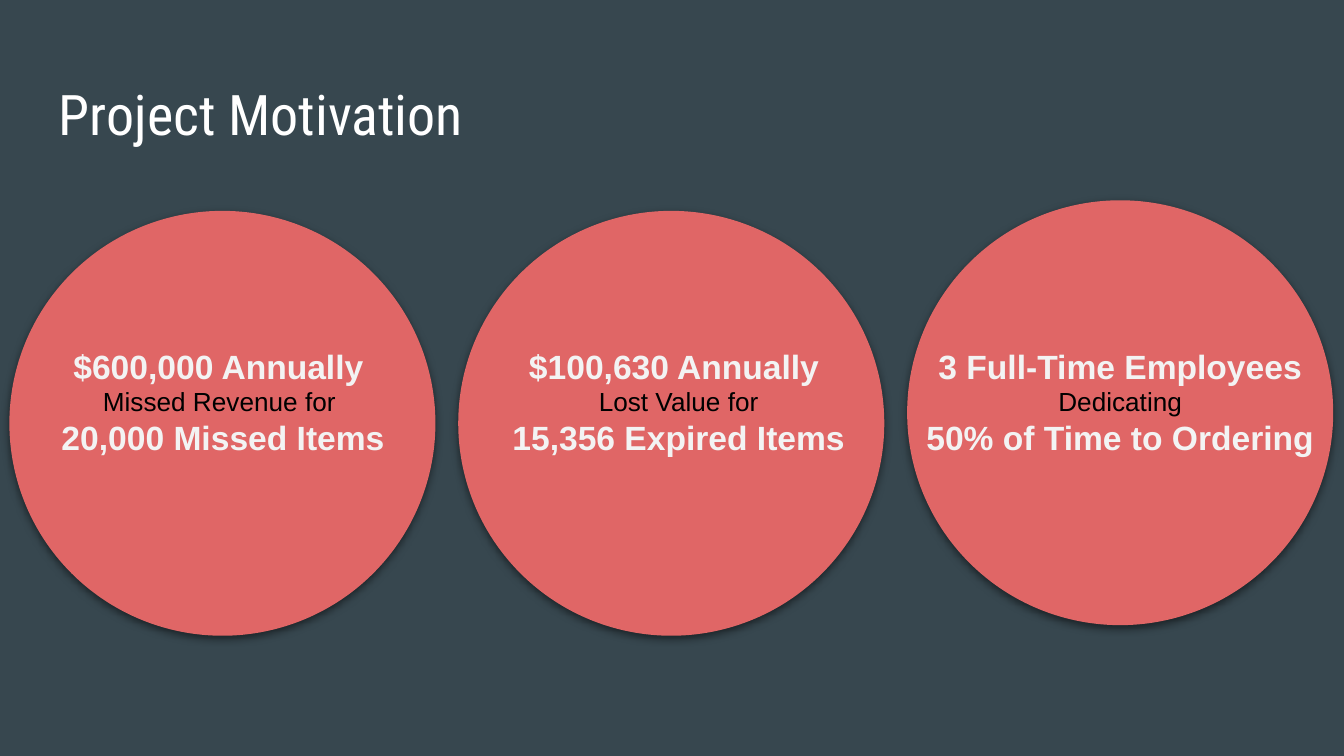
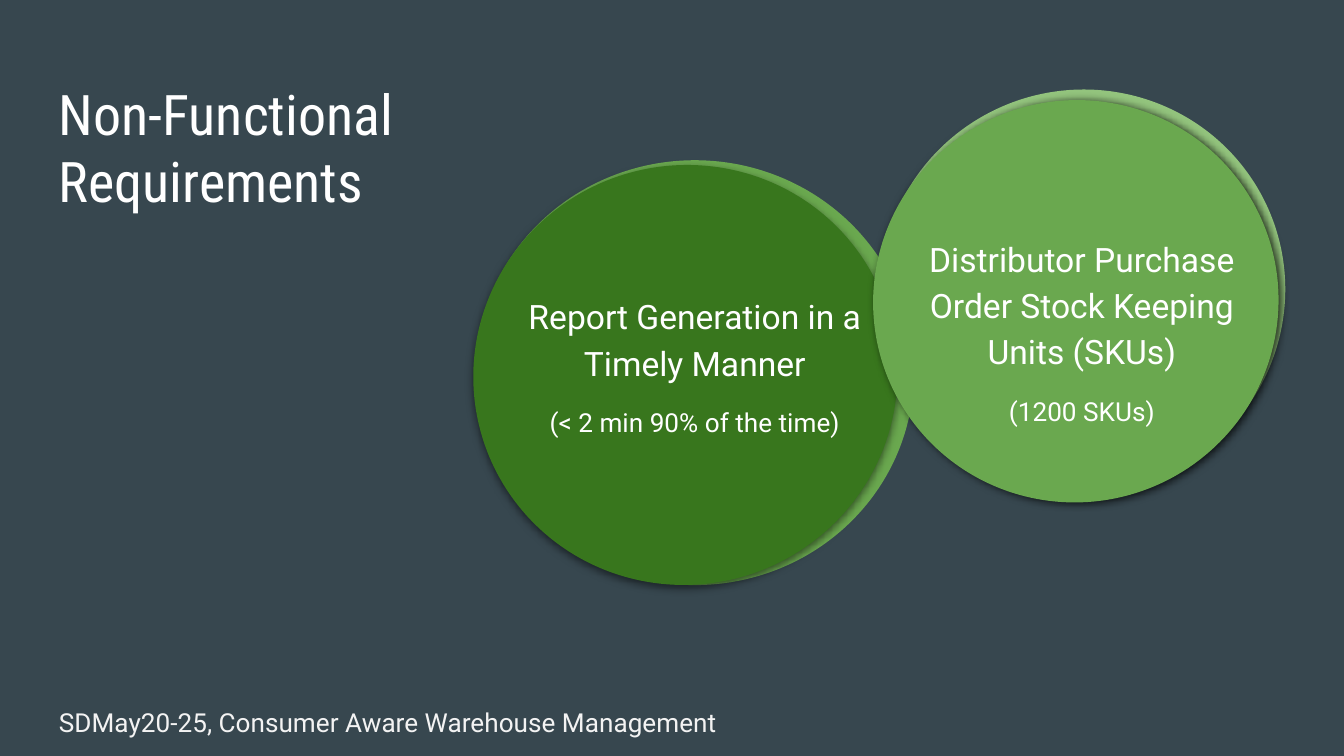
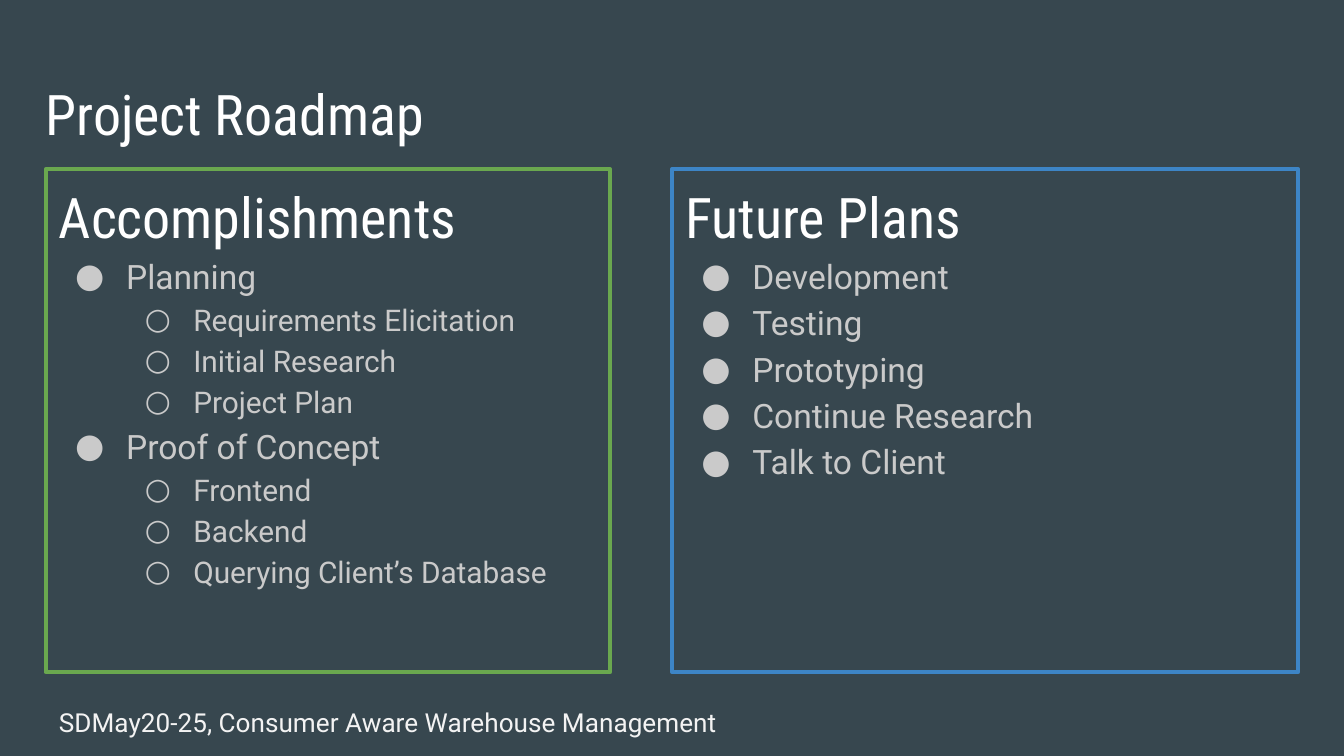
from dataclasses import dataclass

from lxml.etree import SubElement
from pptx import Presentation
from pptx.dml.color import RGBColor
from pptx.enum.shapes import MSO_SHAPE
from pptx.enum.text import MSO_ANCHOR, PP_ALIGN
from pptx.oxml.ns import qn
from pptx.util import Inches, Pt

SLIDE_WIDTH, SLIDE_HEIGHT = Inches(10), Inches(5.625)

SLATE = RGBColor(0x37, 0x47, 0x4F)
CORAL = RGBColor(0xE0, 0x66, 0x66)
PALE_GREEN = RGBColor(0x93, 0xC4, 0x7D)
GREEN = RGBColor(0x6A, 0xA8, 0x4F)
DARK_GREEN = RGBColor(0x38, 0x76, 0x1D)
BLUE = RGBColor(0x3D, 0x85, 0xC6)
WHITE = RGBColor(0xFF, 0xFF, 0xFF)
OFF_WHITE = RGBColor(0xF3, 0xF3, 0xF3)
LIGHT_GREY = RGBColor(0xCA, 0xCA, 0xCA)
BLACK = RGBColor(0x00, 0x00, 0x00)

FOOTER = "SDMay20-25, Consumer Aware Warehouse Management"
BULLETS = (("●", 0.5, -0.38), ("○", 1, -0.36))  # mark, margin, indent by level


@dataclass(frozen=True)
class Style:
    font: str
    size: int
    color: RGBColor
    bold: bool = False
    align: PP_ALIGN = PP_ALIGN.LEFT
    line_spacing: float = 1.0
    gap: int = 0
    level: int | None = None


HEADING = Style("Roboto Condensed", 30, WHITE)
FOOTNOTE = Style("Roboto", 14, OFF_WHITE)
FIGURE = Style("Arial", 18, OFF_WHITE, True, PP_ALIGN.CENTER)
LINK_WORDS = Style("Arial", 14, BLACK, False, PP_ALIGN.CENTER)
REQUIREMENT = Style("Roboto", 18, WHITE, False, PP_ALIGN.CENTER, 1.15)
MEASURE = Style("Roboto", 14, WHITE, False, PP_ALIGN.CENTER, 1.15, 10)
TOPIC = Style("Roboto", 18, LIGHT_GREY, line_spacing=1.15, level=0)
SUBTOPIC = Style("Roboto", 16, LIGHT_GREY, line_spacing=1.15, level=1)


def area(left, top, width, height):
    """Turn percentages of the slide's width and height into lengths."""
    return (int(SLIDE_WIDTH * left / 100), int(SLIDE_HEIGHT * top / 100),
            int(SLIDE_WIDTH * width / 100), int(SLIDE_HEIGHT * height / 100))


def add_bullet(para, style):
    mark, margin, indent = BULLETS[style.level]
    para.level = style.level
    properties = para._p.get_or_add_pPr()
    properties.set("marL", str(Inches(margin)))
    properties.set("indent", str(Inches(indent)))
    color = SubElement(properties, qn("a:buClr"))
    SubElement(color, qn("a:srgbClr"), val=str(style.color))
    SubElement(properties, qn("a:buFont"), typeface=style.font)
    SubElement(properties, qn("a:buChar"), char=mark)


def write(box, lines, anchor=MSO_ANCHOR.TOP):
    """Fill a box with (text, style) lines, one paragraph each."""
    frame = box.text_frame
    frame.word_wrap = True
    frame.vertical_anchor = anchor
    frame.margin_left = frame.margin_right = Inches(0.1)
    frame.margin_top = frame.margin_bottom = Inches(0.1)
    frame.text = "\n".join(text for text, _ in lines)
    for para, (_, style) in zip(frame.paragraphs, lines):
        para.alignment = style.align
        para.line_spacing = style.line_spacing
        para.space_before = para.space_after = Pt(style.gap)
        if style.level is not None:
            add_bullet(para, style)
        for span in para.runs:
            span.font.name = style.font
            span.font.size = Pt(style.size)
            span.font.bold = style.bold
            span.font.color.rgb = style.color


def add_text(page, place, lines, anchor=MSO_ANCHOR.TOP):
    write(page.shapes.add_textbox(*area(*place)), lines, anchor)


def add_title(page, *lines, left=3.4, width=93.2):
    add_text(page, (left, 8.7, width, 11.2), [(line, HEADING) for line in lines])


def add_footer(page):
    add_text(page, (3.4, 91.6, 93.2, 5.9), [(FOOTER, FOOTNOTE)])


def add_shadow(shape, opacity, angle):
    effects = shape._element.spPr.find(qn("a:effectLst"))
    shadow = SubElement(effects, qn("a:outerShdw"), blurRad=str(Pt(4.5)),
                        dist=str(Pt(1.5)), dir=str(angle * 60000),
                        algn="bl", rotWithShape="0")
    color = SubElement(shadow, qn("a:srgbClr"), val=str(BLACK))
    SubElement(color, qn("a:alpha"), val=str(opacity * 1000))


def add_circle(page, place, color, rotation=0, shadow=None):
    """Draw a disc; shadow is (opacity in percent, angle in degrees)."""
    circle = page.shapes.add_shape(MSO_SHAPE.OVAL, *area(*place))
    circle.shadow.inherit = False
    circle.fill.solid()
    circle.fill.fore_color.rgb = color
    circle.line.fill.background()
    circle.rotation = rotation
    if shadow:
        add_shadow(circle, *shadow)


def add_panel(page, left, width, color, heading, items):
    panel = page.shapes.add_shape(MSO_SHAPE.RECTANGLE,
                                  *area(left, 22.4, width, 66.5))
    panel.shadow.inherit = False
    panel.fill.background()
    panel.line.color.rgb = color
    panel.line.width = Pt(2.25)
    write(panel, [(heading, HEADING)] + items)


def add_page(deck):
    page = deck.slides.add_slide(deck.slide_layouts[6])
    page.background.fill.solid()
    page.background.fill.fore_color.rgb = SLATE
    return page


def build_motivation(deck):
    page = add_page(deck)
    for column, top in enumerate((27.9, 27.9, 26.5)):
        add_circle(page, (0.7 + 33.4 * column, top, 31.7, 56.2), CORAL,
                   shadow=(50, 90))
    add_title(page, "Project Motivation")
    captions = (
        (3.3, 26.6, "$600,000 Annually ", "Missed Revenue for ", "20,000 Missed Items"),
        (37, 27, "$100,630 Annually ", "Lost Value for", "15,356 Expired Items"),
        (67.1, 32.5, "3 Full-Time Employees", "Dedicating", "50% of Time to Ordering"),
    )
    for left, width, cost, link, cause in captions:
        add_text(page, (left, 34.5, width, 37.2),
                 [(cost, FIGURE), (link, LINK_WORDS), (cause, FIGURE)],
                 MSO_ANCHOR.MIDDLE)


def build_requirements(deck):
    page = add_page(deck)
    tilt = 249.7
    add_circle(page, (65.6, 11.6, 29.9, 53.7), PALE_GREEN, tilt)
    add_title(page, "Non-Functional", "Requirements", width=56.6)
    add_footer(page)
    add_circle(page, (35.4, 21.2, 32.6, 56.2), GREEN)
    add_circle(page, (35.4, 21.5, 31.2, 56.2), DARK_GREEN, tilt, (50, 90))
    add_circle(page, (65.1, 13, 29.9, 53.7), GREEN, tilt, (77, 18))
    requirements = (
        ((36.3, 36.6, 30.8, 26.8), "Report Generation in a Timely Manner",
         "(< 2 min 90% of the time)"),
        ((65.1, 29, 30.8, 22),
         "Distributor Purchase Order Stock Keeping Units (SKUs)", "(1200 SKUs)"),
    )
    for place, requirement, measure in requirements:
        add_text(page, place, [(requirement, REQUIREMENT), (measure, MEASURE)])


def build_roadmap(deck):
    page = add_page(deck)
    add_title(page, "Project Roadmap", left=2.4, width=94.1)
    accomplishments = {
        "Planning": ("Requirements Elicitation", "Initial Research", "Project Plan"),
        "Proof of Concept": ("Frontend", "Backend", "Querying Client’s Database"),
    }
    done = []
    for topic, subtopics in accomplishments.items():
        done.append((topic, TOPIC))
        done.extend((subtopic, SUBTOPIC) for subtopic in subtopics)
    plans = ("Development", "Testing", "Prototyping", "Continue Research",
             "Talk to Client")
    add_panel(page, 3.4, 42, GREEN, "Accomplishments", done)
    add_footer(page)
    add_panel(page, 50, 46.6, BLUE, "Future Plans", [(plan, TOPIC) for plan in plans])


def main():
    deck = Presentation()
    deck.slide_width, deck.slide_height = SLIDE_WIDTH, SLIDE_HEIGHT
    build_motivation(deck)
    build_requirements(deck)
    build_roadmap(deck)
    deck.save("out.pptx")


if __name__ == "__main__":
    main()
